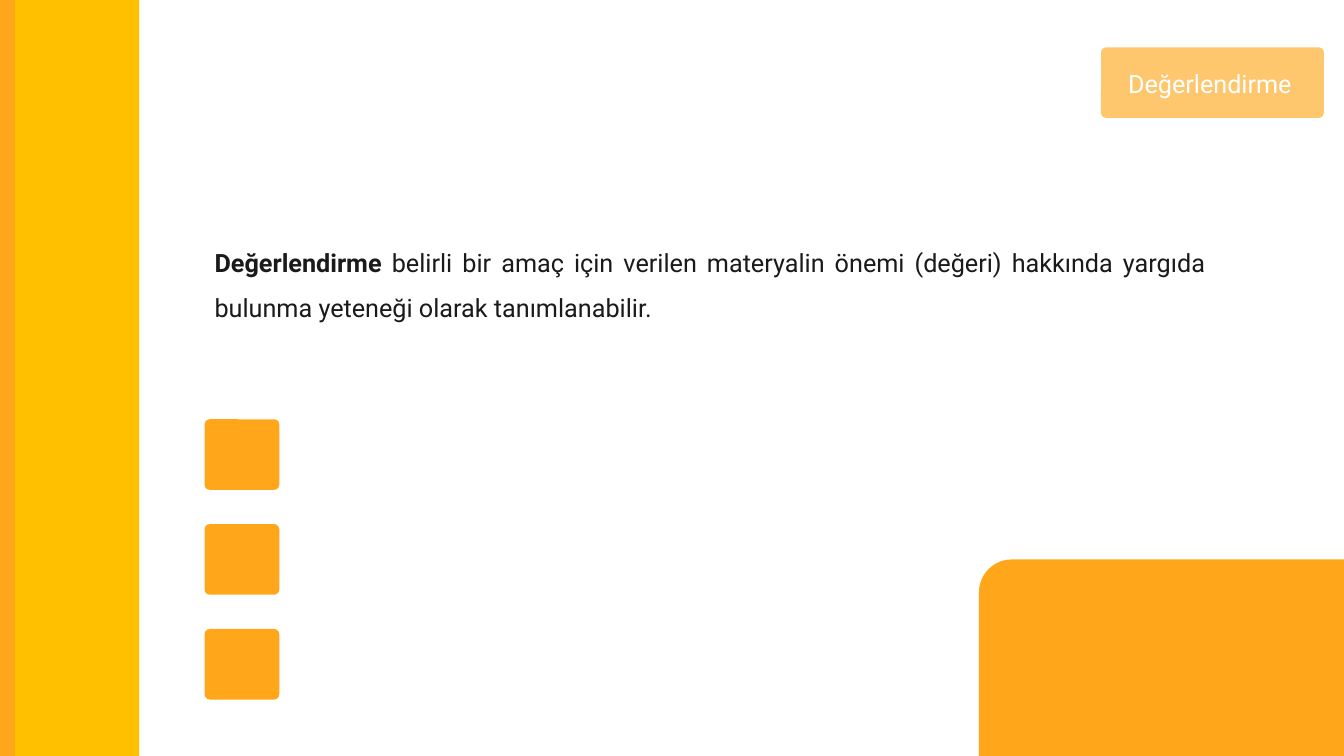
from pptx import Presentation
from pptx.dml.color import RGBColor
from pptx.enum.shapes import MSO_SHAPE
from pptx.enum.text import PP_ALIGN
from pptx.util import Inches, Pt

WIDE, HIGH = 13.33, 7.5
ORANGE, PALE, YELLOW = "FFA61A", "FFC76D", "FFC000"
INK, WHITE = "1A1A1A", "FFFFFF"
LEFT = 2.03
TILE_W, TILE_H = 0.74, 0.7
TILE_TOP, TILE_STEP = 4.16, 1.04


def color(code):
    return RGBColor.from_string(code)


def add_block(slide, kind, box, fill, round_by=None):
    block = slide.shapes.add_shape(kind, *map(Inches, box))
    block.shadow.inherit = False
    block.fill.solid()
    block.fill.fore_color.rgb = color(fill)
    block.line.fill.background()
    if round_by is not None:
        block.adjustments[0] = round_by
    return block


def add_text(slide, box, parts, ink, align=PP_ALIGN.LEFT, spacing=1.0):
    """Write one paragraph from (text, bold) parts."""
    frame = slide.shapes.add_textbox(*map(Inches, box)).text_frame
    frame.word_wrap = True
    para = frame.paragraphs[0]
    para.alignment = align
    para.line_spacing = spacing
    para.space_before = Pt(10)
    for text, bold in parts:
        run = para.add_run()
        run.text = text
        run.font.name = "Roboto"
        run.font.size = Pt(18)
        run.font.bold = bold
        run.font.color.rgb = color(ink)


def main():
    deck = Presentation()
    deck.slide_width, deck.slide_height = Inches(WIDE), Inches(HIGH)
    slide = deck.slides.add_slide(deck.slide_layouts[6])

    add_block(slide, MSO_SHAPE.RECTANGLE, (0, 0, 0.19, HIGH), ORANGE)
    add_text(slide, (LEFT, 2.25, 10.03, 2.26), [
        ("Değerlendirme", True),
        (" belirli bir amaç için verilen materyalin önemi (değeri) "
         "hakkında yargıda bulunma yeteneği olarak tanımlanabilir.", False),
    ], INK, PP_ALIGN.JUSTIFY, 1.5)

    corner = add_block(slide, MSO_SHAPE.ROUND_1_RECTANGLE,
                       (9.71, 5.55, WIDE - 9.71, HIGH - 5.55), ORANGE)
    corner.element.spPr.xfrm.set("flipH", "1")

    for row in range(3):
        top = TILE_TOP + row * TILE_STEP
        add_block(slide, MSO_SHAPE.ROUNDED_RECTANGLE,
                  (LEFT, top, TILE_W, TILE_H), ORANGE, 0.072)

    add_block(slide, MSO_SHAPE.ROUNDED_RECTANGLE,
              (10.92, 0.47, 2.21, TILE_H), PALE, 0.072)
    add_text(slide, (11.09, 0.63, 2.04, 0.53),
             [("Değerlendirme", False)], WHITE)
    add_block(slide, MSO_SHAPE.ROUNDED_RECTANGLE,
              (0.15, 0, 1.23, HIGH), YELLOW, 0)

    deck.save("out.pptx")


if __name__ == "__main__":
    main()
